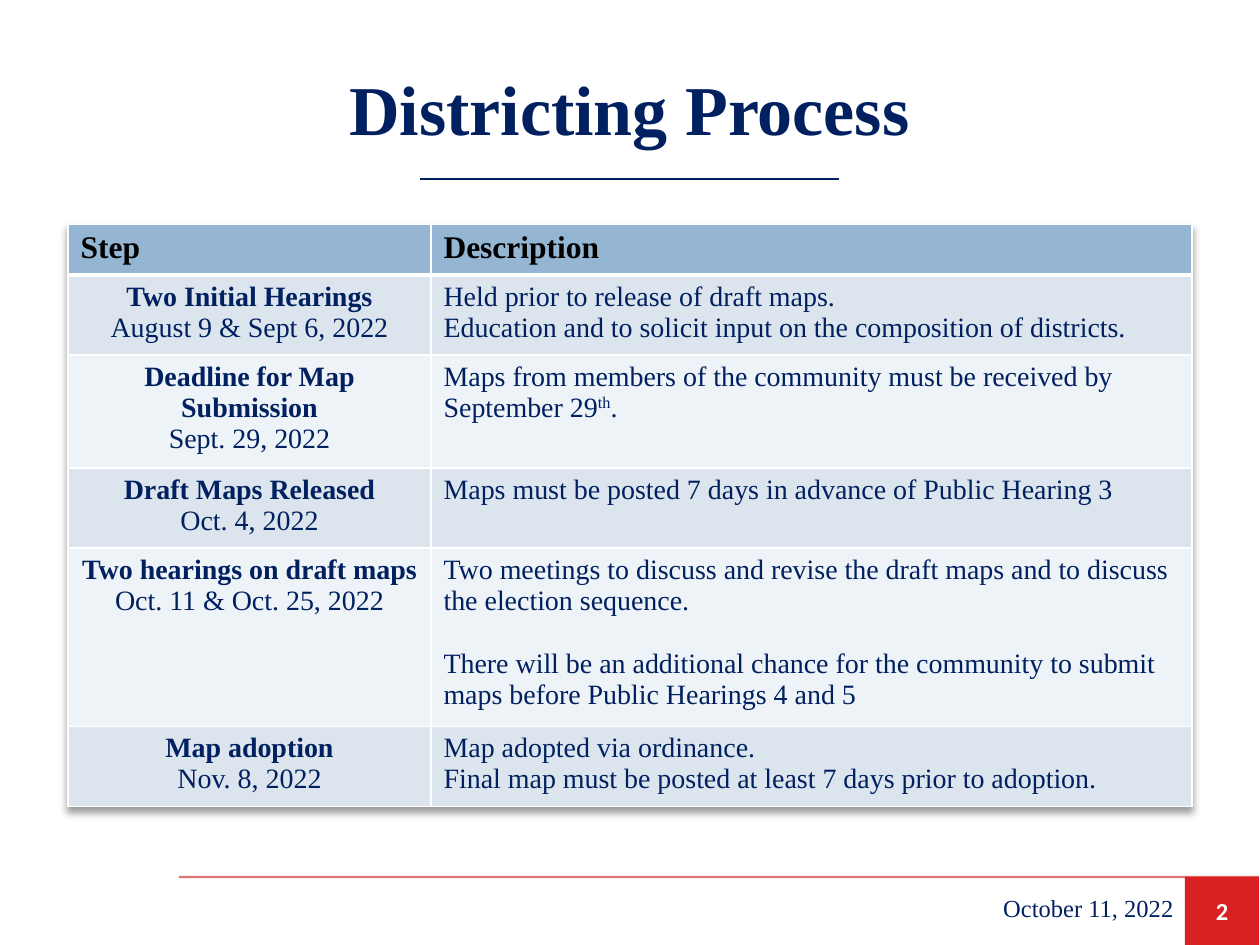
import pptx
import pptx.util
import pptx.dml.color
import pptx.enum.shapes
import pptx.enum.text
import pptx.oxml
import pptx.oxml.ns

ALIGN = pptx.enum.text.PP_ALIGN
MIDDLE = pptx.enum.text.MSO_ANCHOR.MIDDLE
NAMESPACE = pptx.oxml.ns.nsdecls("a")
SERIF = "Times New Roman"
NAVY, WHITE, RED = "002060", "FFFFFF", "D92121"
HEADER_FILL, BANDS = "94B6D2", ("DCE5EE", "EEF3F7")

COLUMN_WIDTHS = (363, 761)
ROW_HEIGHTS = (51, 74, 107, 74, 169, 75)
HEADINGS = ("Step", "Description")
# Step name, date, description paragraphs; ^ encloses superscript
STEPS = (
    ("Two Initial Hearings", "August 9 & Sept 6, 2022",
     ("Held prior to release of draft maps.",
      "Education and to solicit input on the composition of districts.")),
    ("Deadline for Map Submission", "Sept. 29, 2022",
     ("Maps from members of the community must be received by September 29^th^.",)),
    ("Draft Maps Released", "Oct. 4, 2022",
     ("Maps must be posted 7 days in advance of Public Hearing 3",)),
    ("Two hearings on draft maps", "Oct. 11 & Oct. 25, 2022",
     ("Two meetings to discuss and revise the draft maps and to discuss the election sequence.",
      "There will be an additional chance for the community to submit maps before "
      "Public Hearings 4 and 5")),
    ("Map adoption", "Nov. 8, 2022",
     ("Map adopted via ordinance.",
      "Final map must be posted at least 7 days prior to adoption.")),
)
SPACED_STEP = "Two hearings on draft maps"


def px(length):
    return pptx.util.Emu(round(length * 914400 / 126))


def color(value):
    return pptx.dml.color.RGBColor.from_string(value)


def write(para, text, size, ink=NAVY, bold=False, align=ALIGN.LEFT, face=SERIF):
    """Fill a paragraph, raising the parts enclosed in ^."""
    for index, part in enumerate(text.split("^")):
        span = para.add_run()
        span.text = part
        if index % 2:
            span._r.get_or_add_rPr().set("baseline", "30000")
    para.alignment = align
    font = para.font
    font.name, font.size, font.bold = face, pptx.util.Pt(size), bold
    font.color.rgb = color(ink)


def add_text(page, text, left, top, width, height, size, **style):
    box = page.shapes.add_textbox(px(left), px(top), px(width), px(height))
    box.text_frame.word_wrap = True
    box.text_frame.vertical_anchor = MIDDLE
    write(box.text_frame.paragraphs[0], text, size, **style)


def add_rule(page, left, right, y, ink, weight, opacity=100):
    rule = page.shapes.add_connector(
        pptx.enum.shapes.MSO_CONNECTOR.STRAIGHT, px(left), px(y), px(right), px(y))
    rule.line.color.rgb = color(ink)
    rule.line.width = pptx.util.Pt(weight)
    if opacity < 100:
        tint = rule.line._ln.find(".//" + pptx.oxml.ns.qn("a:srgbClr"))
        tint.append(pptx.oxml.parse_xml(f'<a:alpha {NAMESPACE} val="{opacity * 1000}"/>'))
    rule._element.spPr.append(pptx.oxml.parse_xml(f"<a:effectLst {NAMESPACE}/>"))


def add_page_number(page, number):
    square = page.shapes.add_shape(
        pptx.enum.shapes.MSO_SHAPE.RECTANGLE, px(1185), px(877), px(74), px(68))
    square.shadow.inherit = False
    square.fill.solid()
    square.fill.fore_color.rgb = color(RED)
    square.line.fill.background()
    square.text_frame.vertical_anchor = MIDDLE
    write(square.text_frame.paragraphs[0], number, 14, WHITE, True, ALIGN.CENTER, "Calibri")


def style_cell(cell, fill, top=1, bottom=1):
    """Give a cell white borders, in points, and a fill."""
    properties = cell._tc.get_or_add_tcPr()
    for side, weight in (("L", 1), ("R", 1), ("T", top), ("B", bottom)):
        properties.append(pptx.oxml.parse_xml(
            f'<a:ln{side} {NAMESPACE} w="{weight * 12700}"><a:solidFill>'
            f'<a:srgbClr val="{WHITE}"/></a:solidFill></a:ln{side}>'))
    cell.fill.solid()
    cell.fill.fore_color.rgb = color(fill)


def add_table_shadow(table):
    table._tbl.tblPr.insert(0, pptx.oxml.parse_xml(
        f'<a:effectLst {NAMESPACE}><a:outerShdw blurRad="50800" dist="38100" dir="5400000" '
        'algn="t" rotWithShape="0"><a:srgbClr val="000000"><a:alpha val="40000"/></a:srgbClr>'
        '</a:outerShdw></a:effectLst>'))


def add_steps_table(page):
    table = page.shapes.add_table(
        len(ROW_HEIGHTS), len(COLUMN_WIDTHS), px(68), px(224),
        px(sum(COLUMN_WIDTHS)), px(sum(ROW_HEIGHTS))).table
    table.horz_banding = False
    add_table_shadow(table)
    for column, width in zip(table.columns, COLUMN_WIDTHS):
        column.width = px(width)
    for row, height in zip(table.rows, ROW_HEIGHTS):
        row.height = px(height)

    for index, heading in enumerate(HEADINGS):
        cell = table.cell(0, index)
        style_cell(cell, HEADER_FILL, bottom=3)
        write(cell.text_frame.paragraphs[0], heading, 18, "000000", True)

    for index, (name, date, descriptions) in enumerate(STEPS):
        step, description = table.rows[index + 1].cells
        for cell in (step, description):
            style_cell(cell, BANDS[index % 2], top=1 if index else 3)
        write(step.text_frame.paragraphs[0], name, 16, bold=True, align=ALIGN.CENTER)
        write(step.text_frame.add_paragraph(), date, 16, align=ALIGN.CENTER)
        frame = description.text_frame
        write(frame.paragraphs[0], descriptions[0], 16)
        for text in descriptions[1:]:
            para = frame.add_paragraph()
            write(para, text, 16)
            if name == SPACED_STEP:
                para.space_before = pptx.util.Pt(18)


def main():
    deck = pptx.Presentation()
    deck.slide_width, deck.slide_height = px(1260), px(945)
    page = deck.slides.add_slide(deck.slide_layouts[6])
    add_rule(page, 179, 1259, 877, "C80000", 1.25, opacity=55)
    add_page_number(page, "2")
    add_text(page, "Districting Process", 47, 40, 1165, 136, 40, bold=True, align=ALIGN.CENTER)
    add_rule(page, 420, 839, 179, NAVY, 0.75)
    add_steps_table(page)
    add_text(page, "October 11, 2022", 818, 883, 368, 50, 14, align=ALIGN.RIGHT)
    deck.save("out.pptx")


if __name__ == "__main__":
    main()
